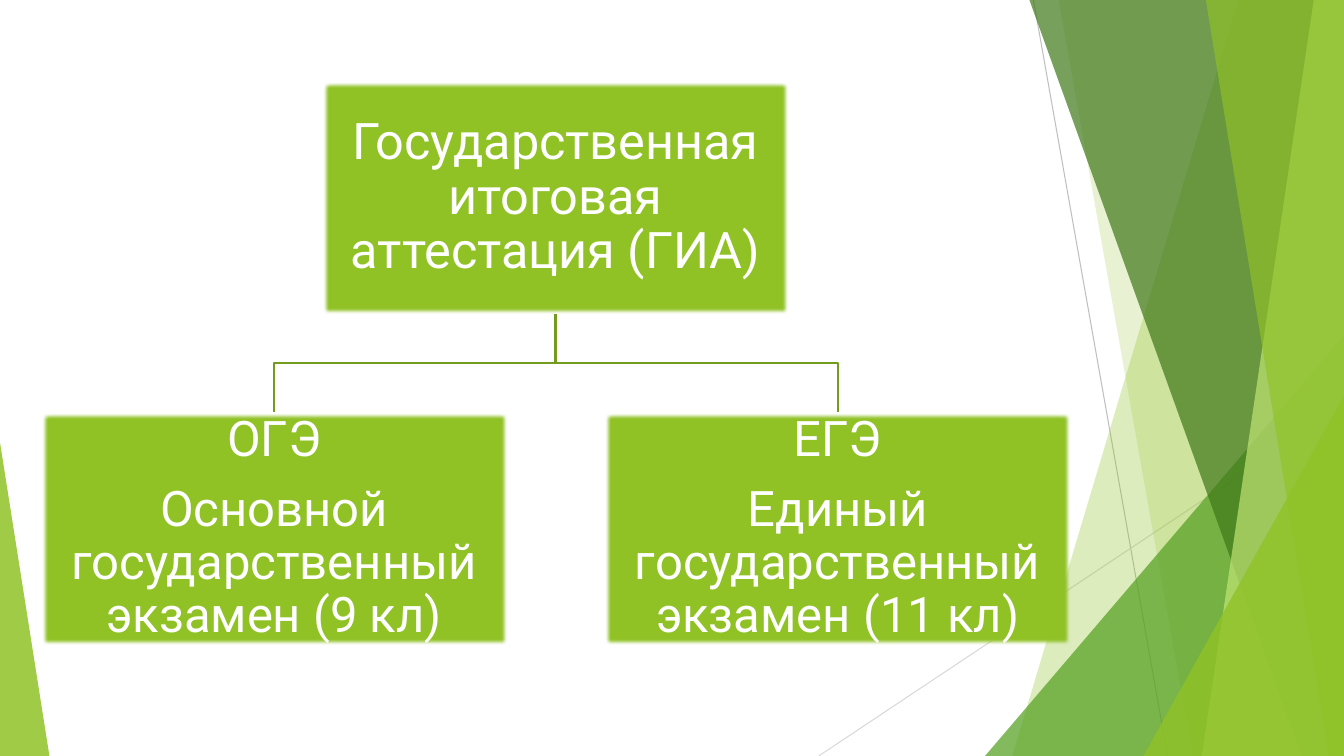
from lxml import etree
from pptx import Presentation
from pptx.dml.color import RGBColor
from pptx.enum.shapes import MSO_CONNECTOR, MSO_SHAPE
from pptx.enum.text import MSO_ANCHOR, PP_ALIGN
from pptx.oxml.ns import qn
from pptx.util import Inches, Pt

STRAIGHT = MSO_CONNECTOR.STRAIGHT
RECTANGLE = MSO_SHAPE.RECTANGLE
TRIANGLE = MSO_SHAPE.ISOSCELES_TRIANGLE
MIDDLE = MSO_ANCHOR.MIDDLE
CENTER = PP_ALIGN.CENTER

WHITE = RGBColor(0xFF, 0xFF, 0xFF)
GREY = RGBColor(0xBF, 0xBF, 0xBF)
LIGHT_GREY = RGBColor(0xD9, 0xD9, 0xD9)
LIME = RGBColor(0x90, 0xC2, 0x26)
PALE_LIME = RGBColor(0xC0, 0xE4, 0x74)
GREEN = RGBColor(0x54, 0xA0, 0x21)
DARK_GREEN = RGBColor(0x3F, 0x78, 0x19)
BRANCH_GREEN = RGBColor(0x73, 0x9B, 0x1E)

WIDTH, HEIGHT = 13.33, 7.5
FONT = "Roboto"

deck = Presentation()
deck.slide_width, deck.slide_height = Inches(WIDTH), Inches(HEIGHT)
page = deck.slides.add_slide(deck.slide_layouts[6])
shapes = page.shapes


def add_outline(points, close):
    corners = [(Inches(x), Inches(y)) for x, y in points]
    builder = shapes.build_freeform(*corners[0])
    builder.add_line_segments(corners[1:], close=close)
    outline = builder.convert_to_shape()
    outline.shadow.inherit = False
    return outline


def paint_facet(facet, color, opacity):
    """Give a background facet a see-through fill and no line."""
    facet.shadow.inherit = False
    facet.line.fill.background()
    facet.fill.solid()
    facet.fill.fore_color.rgb = color
    tint = facet.element.spPr.find(qn("a:solidFill"))[0]
    etree.SubElement(tint, qn("a:alpha"), val=str(opacity * 1000))


# Background: two thin lines, then facets from back to front
for start_x, start_y, end_x, color in [
    (10.25, 0, 11.58, GREY),
    (WIDTH, 4.03, 8.12, LIGHT_GREY),
]:
    ray = shapes.add_connector(
        STRAIGHT, Inches(start_x), Inches(start_y), Inches(end_x), Inches(HEIGHT)
    )
    ray.line.color.rgb = color
    ray.line.width = Pt(0.75)
    etree.SubElement(ray.element.spPr, qn("a:effectLst"))

# A band gives its left edge (top x, bottom x) and reaches the right side;
# a triangle gives (left, top, width, apex) and stands on the bottom side.
for facet_edges, color, opacity in [
    ((12.28, 10.04), LIME, 30),
    ((10.5, 11.83), LIME, 20),
    ((9.77, 3.33, 3.56, 1), GREEN, 72),
    ((10.21, 12.91), DARK_GREEN, 70),
    ((13.03, 11.92), PALE_LIME, 70),
    ((11.96, 13.18), LIME, 65),
    ((11.34, 3.93, 1.99, 1), LIME, 80),
    ((0, 4.39, 0.49, 0), LIME, 85),
]:
    if len(facet_edges) == 2:
        top_x, bottom_x = facet_edges
        facet = add_outline(
            [(top_x, 0), (WIDTH, 0), (WIDTH, HEIGHT), (bottom_x, HEIGHT)], True
        )
    else:
        left, top, width, apex = facet_edges
        facet = shapes.add_shape(
            TRIANGLE, Inches(left), Inches(top), Inches(width), Inches(HEIGHT - top)
        )
        facet.adjustments[0] = apex
    paint_facet(facet, color, opacity)

# Hierarchy: branches first, boxes above them
BOX_WIDTH, BOX_HEIGHT = 4.62, 2.31
ROOT_LEFT, ROOT_TOP = 3.2, 0.81
CHILD_TOP = 4.09
CHILD_LEFTS = (0.41, 6)

root_x = ROOT_LEFT + BOX_WIDTH / 2
root_bottom = ROOT_TOP + BOX_HEIGHT
fork_y = (root_bottom + CHILD_TOP) / 2
for child_left in reversed(CHILD_LEFTS):
    child_x = child_left + BOX_WIDTH / 2
    branch = add_outline(
        [(root_x, root_bottom), (root_x, fork_y), (child_x, fork_y), (child_x, CHILD_TOP)],
        False,
    )
    branch.fill.background()
    branch.line.color.rgb = BRANCH_GREEN
    branch.line.width = Pt(1.5)

for left, top, size, inset, lines in [
    (ROOT_LEFT, ROOT_TOP, 36, 0.03, ["Государственная итоговая аттестация (ГИА)"]),
    (CHILD_LEFTS[0], CHILD_TOP, 35, 0.02,
     ["ОГЭ", "Основной государственный экзамен (9 кл)"]),
    (CHILD_LEFTS[1], CHILD_TOP, 35, 0.02,
     ["ЕГЭ", "Единый государственный экзамен (11 кл)"]),
]:
    box = shapes.add_shape(
        RECTANGLE, Inches(left), Inches(top), Inches(BOX_WIDTH), Inches(BOX_HEIGHT)
    )
    box.fill.solid()
    box.fill.fore_color.rgb = LIME
    box.line.color.rgb = WHITE
    box.line.width = Pt(1.5)
    box.shadow.inherit = False
    effects = box.element.spPr.find(qn("a:effectLst"))
    etree.SubElement(effects, qn("a:softEdge"), rad=str(Pt(3)))

    frame = box.text_frame
    frame.word_wrap = True
    frame.vertical_anchor = MIDDLE
    frame.margin_left = frame.margin_right = Inches(inset)
    frame.margin_top = frame.margin_bottom = Inches(inset)
    for index, line in enumerate(lines):
        para = frame.add_paragraph() if index else frame.paragraphs[0]
        para.alignment = CENTER
        para.line_spacing = 0.9
        para.space_after = Pt(0.35 * size)
        span = para.add_run()
        span.text = line
        span.font.name = FONT
        span.font.size = Pt(size)
        span.font.color.rgb = WHITE

deck.save("out.pptx")
